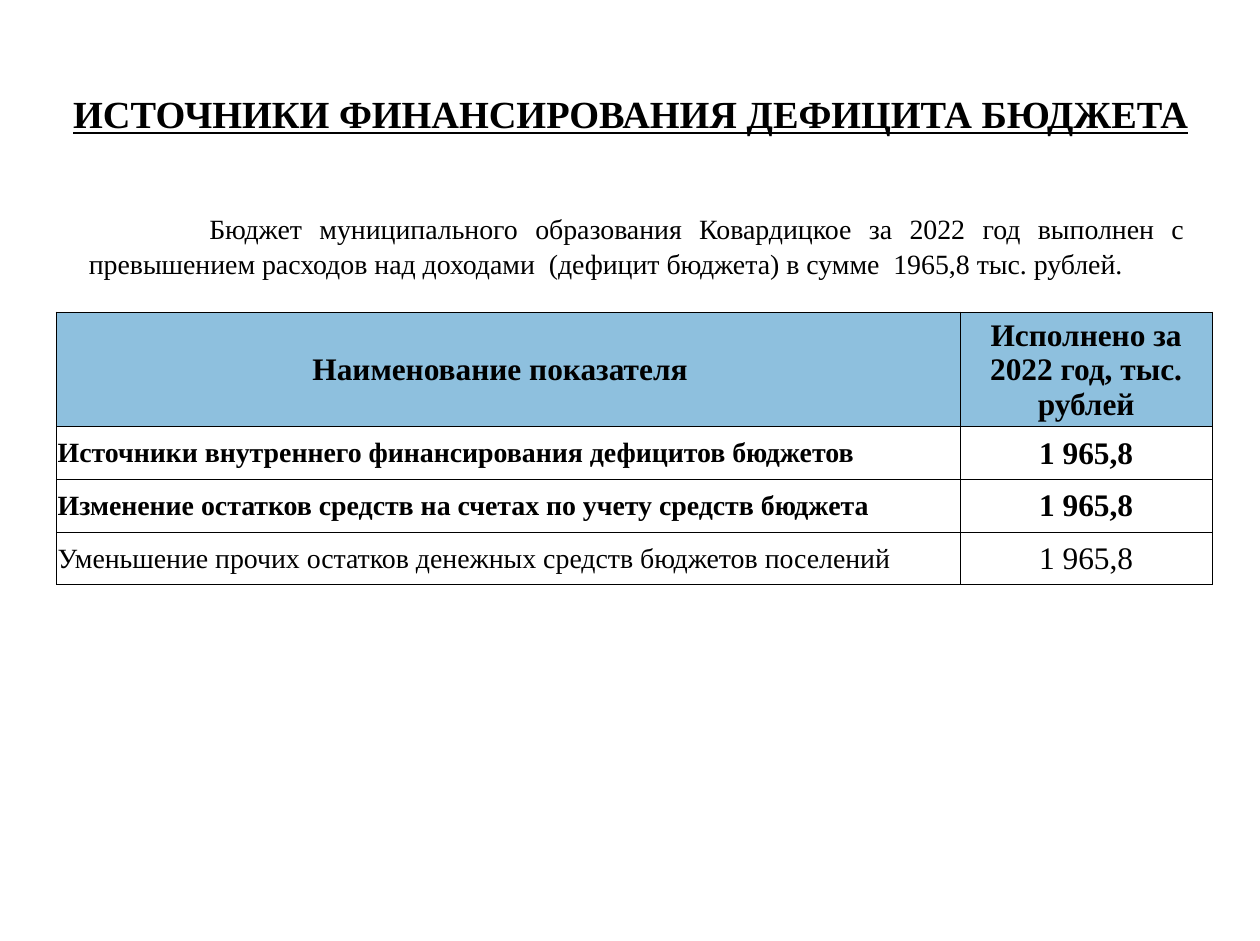
"""Build the slide on the sources of financing the budget deficit."""
from lxml import etree
from pptx import Presentation
from pptx.dml.color import RGBColor
from pptx.enum.text import MSO_ANCHOR, PP_ALIGN
from pptx.oxml.ns import qn
from pptx.util import Inches, Pt

CENTER, JUSTIFY = PP_ALIGN.CENTER, PP_ALIGN.JUSTIFY
MIDDLE, TOP = MSO_ANCHOR.MIDDLE, MSO_ANCHOR.TOP
FONT, BLACK, HEADER_BLUE = "Times New Roman", "000000", "8EC0DE"
TITLE_ONLY = 5


def color(value):
    return RGBColor.from_string(value)


def write(frame, text, size=16, bold=False, underline=False, align=CENTER,
          anchor=MIDDLE, spacing=None, indent=0):
    frame.word_wrap = True
    frame.vertical_anchor = anchor
    paragraph = frame.paragraphs[0]
    paragraph.alignment = align
    paragraph.space_before = Pt(0)
    if spacing:
        paragraph.line_spacing = spacing
    if indent:
        paragraph._p.get_or_add_pPr().set("indent", str(Inches(indent)))
    run = paragraph.add_run()
    run.text = text
    run.font.name = FONT
    run.font.size = Pt(size)
    run.font.bold = bold
    run.font.underline = underline
    run.font.color.rgb = color(BLACK)


deck = Presentation()
deck.slide_width, deck.slide_height = Inches(10.04), Inches(7.5)
slide = deck.slides.add_slide(deck.slide_layouts[TITLE_ONLY])

title = slide.shapes.title
title.left, title.top = Inches(0.3), Inches(0.28)
title.width, title.height = Inches(9.45), Inches(1.25)
write(title.text_frame, "ИСТОЧНИКИ ФИНАНСИРОВАНИЯ ДЕФИЦИТА БЮДЖЕТА",
      size=22, bold=True, underline=True)

summary = slide.shapes.add_textbox(Inches(0.61), Inches(1.62), Inches(8.93), Inches(0.8))
write(summary.text_frame,
      "Бюджет муниципального образования Ковардицкое за 2022 год выполнен с "
      "превышением расходов над доходами  (дефицит бюджета) в сумме  1965,8 тыс. рублей.",
      align=JUSTIFY, anchor=TOP, spacing=1.06, indent=0.96)

indicators = [
    ("Наименование показателя", "Исполнено за 2022 год, тыс. рублей"),
    ("Источники внутреннего финансирования дефицитов бюджетов", "1 965,8"),
    ("Изменение остатков средств на счетах по учету средств бюджета", "1 965,8"),
    ("Уменьшение прочих остатков денежных средств бюджетов поселений", "1 965,8"),
]
column_widths = [7.2, 2.01]
header_height, row_height = 0.84, 0.42
last_row, last_column = len(indicators) - 1, len(column_widths) - 1

table = slide.shapes.add_table(
    len(indicators), len(column_widths), Inches(0.45), Inches(2.49),
    Inches(sum(column_widths)), Inches(header_height + last_row * row_height)).table
table.first_row = table.horz_banding = False
for column, width in zip(table.columns, column_widths):
    column.width = Inches(width)

for r, indicator in enumerate(indicators):
    header = r == 0
    table.rows[r].height = Inches(header_height if header else row_height)
    for c, text in enumerate(indicator):
        cell = table.cell(r, c)
        name_column = c == 0
        cell.margin_left = cell.margin_top = Inches(0.01)
        cell.margin_right = Inches(0.14 if header and name_column else 0.01)
        cell.margin_bottom = 0
        cell.vertical_anchor = MIDDLE
        write(cell.text_frame, text, size=16 if name_column and not header else 18,
              bold=r < last_row, align=JUSTIFY if name_column and not header else CENTER)
        thick = {"lnL": header and name_column, "lnR": header and c == last_column,
                 "lnT": header, "lnB": False}
        for side, is_thick in thick.items():
            border = etree.SubElement(cell._tc.get_or_add_tcPr(), qn(f"a:{side}"),
                                      w=str(Pt(1 if is_thick else 0.5)))
            fill = etree.SubElement(border, qn("a:solidFill"))
            etree.SubElement(fill, qn("a:srgbClr"), val=BLACK)
        if header:
            cell.fill.solid()
            cell.fill.fore_color.rgb = color(HEADER_BLUE)
        else:
            cell.fill.background()

deck.save("out.pptx")
